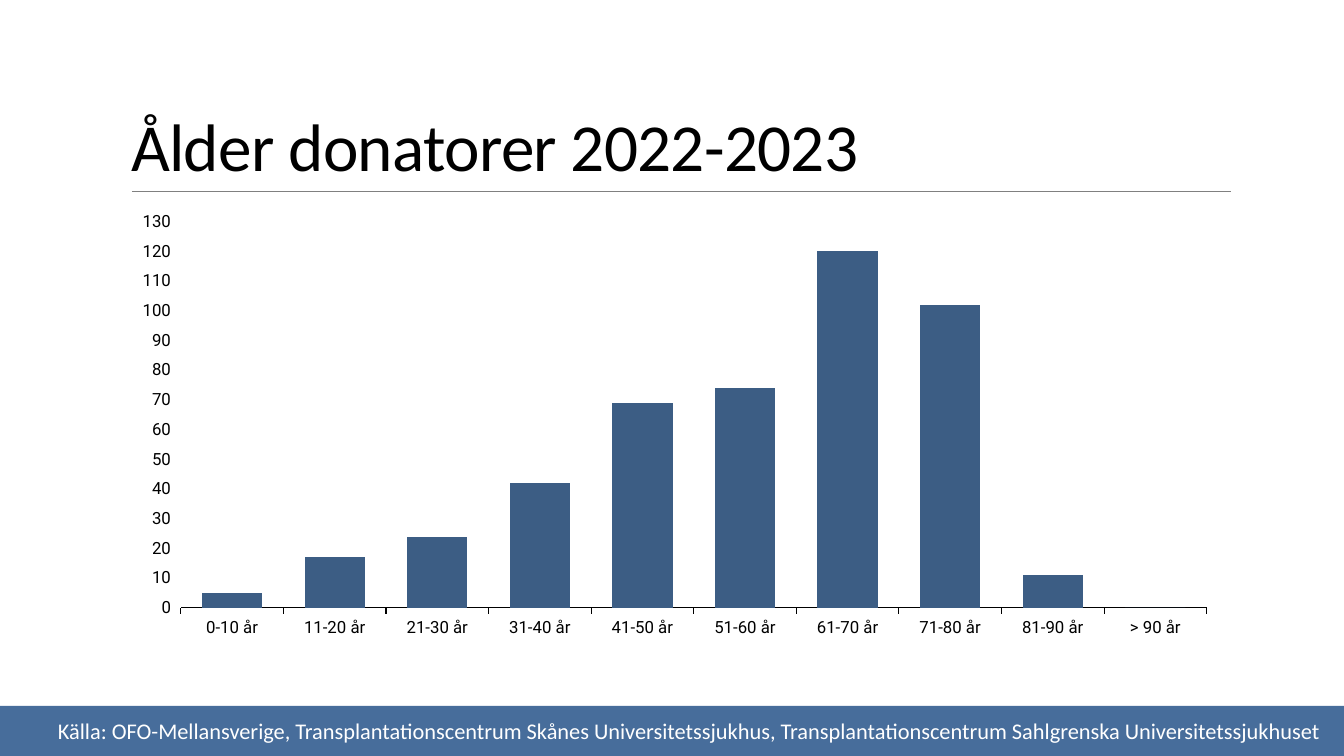
from lxml import etree
from pptx import Presentation
from pptx.chart.data import CategoryChartData
from pptx.dml.color import RGBColor
from pptx.enum.chart import XL_CHART_TYPE, XL_TICK_MARK
from pptx.enum.shapes import MSO_CONNECTOR, MSO_SHAPE
from pptx.enum.text import MSO_ANCHOR, MSO_AUTO_SIZE, PP_ALIGN
from pptx.oxml.ns import qn
from pptx.util import Emu, Pt

WIDE, HIGH = 1344, 756
BLACK = RGBColor(0, 0, 0)
WHITE = RGBColor(255, 255, 255)
GRAY = RGBColor(0x80, 0x80, 0x80)
BAND = RGBColor(0x47, 0x6D, 0x9B)
BAR = RGBColor(0x3C, 0x5D, 0x84)

AGES = [f"{low}-{low + 9} år" for low in range(11, 90, 10)]
AGES = ["0-10 år", *AGES, "> 90 år"]
DONORS = [5, 17, 24, 42, 69, 74, 120, 102, 11, 0]
SOURCE = ("Källa: OFO-Mellansverige, "
          "Transplantationscentrum Skånes Universitetssjukhus, "
          "Transplantationscentrum Sahlgrenska Universitetssjukhuset")


def px(count):
    return Emu(round(count * 12192000 / WIDE))


def style(font, name, size, color):
    font.name, font.size = name, Pt(size)
    font.color.rgb = color


def add_title(slide, left, top, width, height):
    title = slide.shapes.title
    title.left, title.top = px(left), px(top)
    title.width, title.height = px(width), px(height)
    frame = title.text_frame
    frame.text = "Ålder donatorer 2022-2023"
    frame.auto_size = MSO_AUTO_SIZE.NONE
    frame.vertical_anchor = MSO_ANCHOR.BOTTOM
    para = frame.paragraphs[0]
    para.alignment, para.line_spacing = PP_ALIGN.LEFT, 0.85
    font = para.runs[0].font
    style(font, "Calibri", 48, BLACK)
    para.runs[0]._r.get_or_add_rPr().set("spc", "-50")

    # Rule under the title
    base = px(top + height + 1)
    rule = slide.shapes.add_connector(
        MSO_CONNECTOR.STRAIGHT, px(left + 11), base, px(left + width + 1), base)
    rule.line.color.rgb, rule.line.width = GRAY, Pt(0.5)
    etree.SubElement(rule._element.spPr, qn("a:effectLst"))


def place_plot(chart, **parts):
    """Fix the inner plot area as fractions of the chart."""
    area = chart._chartSpace.chart.plotArea
    for old in area.findall(qn("c:layout")):
        area.remove(old)
    layout = etree.Element(qn("c:layout"))
    manual = etree.SubElement(layout, qn("c:manualLayout"))
    modes = {"layoutTarget": "inner", "xMode": "edge", "yMode": "edge"}
    for tag, value in {**modes, **parts}.items():
        etree.SubElement(manual, qn(f"c:{tag}")).set("val", str(value))
    area.insert(0, layout)


def add_bars(slide, left, top, width, height):
    data = CategoryChartData()
    data.categories = AGES
    data.add_series("Series 1", DONORS)
    chart = slide.shapes.add_chart(
        XL_CHART_TYPE.COLUMN_CLUSTERED,
        px(left), px(top), px(width), px(height), data).chart
    chart.has_legend = chart.has_title = False
    style(chart.font, "Calibri", 10, BLACK)
    place_plot(chart, x=0.054, y=0.04, w=0.925, h=0.872)

    # Columns
    plot = chart.plots[0]
    plot.vary_by_categories = False
    plot.gap_width, plot.overlap = 70, -27
    fill = plot.series[0].format.fill
    fill.solid()
    fill.fore_color.rgb = BAR

    # Axes
    for axis in (chart.category_axis, chart.value_axis):
        axis.has_major_gridlines = False
        axis.major_tick_mark = XL_TICK_MARK.OUTSIDE
        axis.minor_tick_mark = XL_TICK_MARK.NONE
        style(axis.tick_labels.font, "Roboto", 12, BLACK)
    line = chart.category_axis.format.line
    line.color.rgb, line.width = BLACK, Pt(0.75)
    scale = chart.value_axis
    scale.format.line.fill.background()
    scale.minimum_scale, scale.maximum_scale, scale.major_unit = 0, 130, 10


def add_foot(slide, left, top, width, height):
    band = slide.shapes.add_shape(
        MSO_SHAPE.RECTANGLE, px(left), px(top), px(width), px(height))
    band.shadow.inherit = False
    band.fill.solid()
    band.fill.fore_color.rgb = BAND
    band.line.fill.background()

    # Source note
    note = slide.shapes.add_textbox(
        px(left + 48), px(top + 6), px(width - 48), px(37))
    frame = note.text_frame
    frame.word_wrap = True
    frame.text = SOURCE
    style(frame.paragraphs[0].runs[0].font, "Calibri", 16, WHITE)


def main():
    deck = Presentation()
    deck.slide_width, deck.slide_height = px(WIDE), px(HIGH)
    slide = deck.slides.add_slide(deck.slide_layouts[5])
    add_foot(slide, 0, 706, WIDE, HIGH - 706)
    add_title(slide, 121, 30, 1109, 160)
    add_bars(slide, 121, 204, 1109, 443)
    deck.save("out.pptx")


if __name__ == "__main__":
    main()
